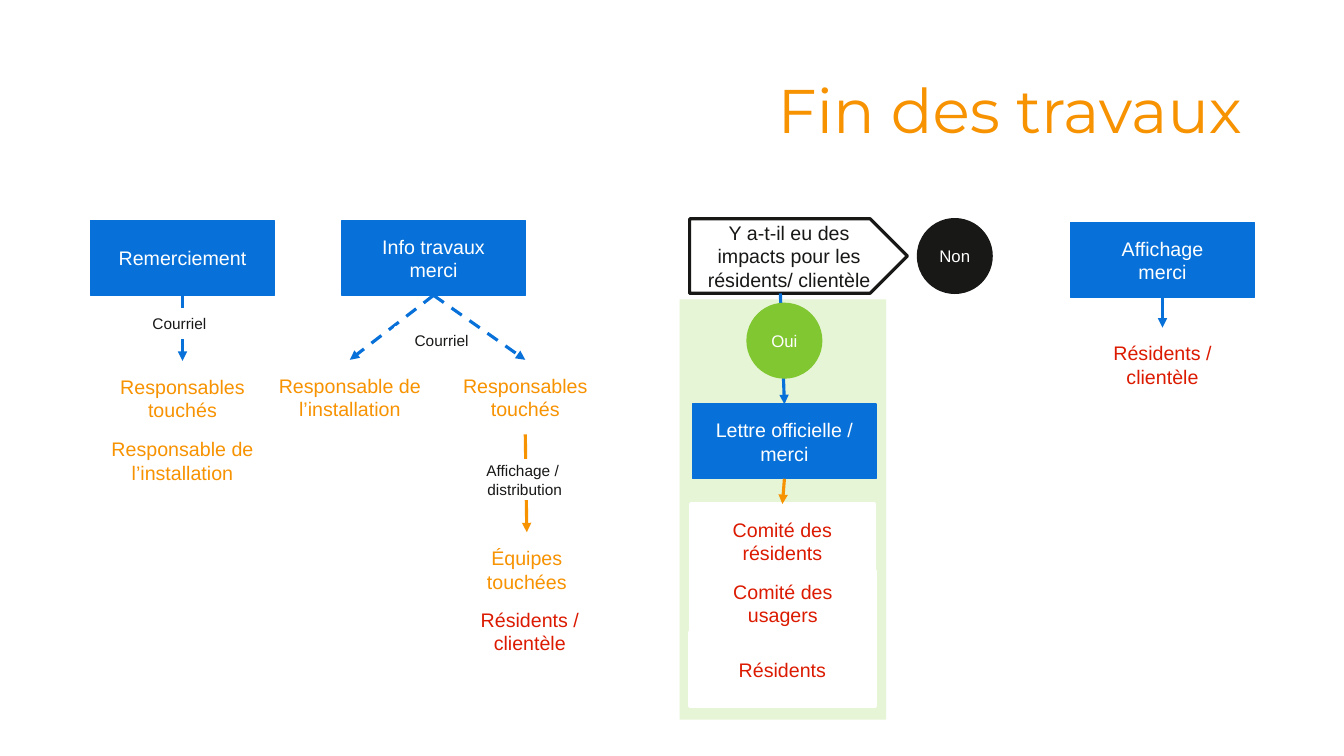
"""Build the flowchart slide that plans messages at the end of works."""
from lxml.etree import SubElement
from pptx import Presentation
from pptx.dml.color import RGBColor
from pptx.enum.dml import MSO_LINE
from pptx.enum.shapes import MSO_CONNECTOR, MSO_SHAPE
from pptx.enum.text import MSO_ANCHOR, PP_ALIGN
from pptx.oxml.ns import qn
from pptx.util import Inches, Pt

COLORS = {"blue": "0871D9", "orange": "F79200", "red": "DB1A00", "black": "181817",
          "green": "81C731", "pale": "E6F5D5", "white": "FFFFFF"}
RECT, ARROW, OVAL = MSO_SHAPE.RECTANGLE, MSO_SHAPE.PENTAGON, MSO_SHAPE.OVAL
W, H = 1.82, 0.74
TOP, BOTTOM = 0, 2

TITLE = ("Fin des travaux", (1.94, 0.4, 10.48, 1.45))
PANEL = (6.74, 2.97, 2.05, 4.17)

# style: geometry, fill, line, line width, text colour, size
STYLES = {
    "action": (RECT, "blue", "blue", 1, "white", 14),
    "staff": (RECT, "white", "white", 2.25, "orange", 14),
    "public": (RECT, "white", "white", 2.25, "red", 14),
    "label": (RECT, "white", "white", 2.25, "black", 11),
    "question": (ARROW, "white", "black", 2.25, "black", 14),
    "no": (OVAL, "black", "black", 1, "white", 12),
    "yes": (OVAL, "green", "green", 1, "white", 12),
}
NODES = {
    "info_touched": ("staff", "Responsables touchés", (4.3, 3.57, W, H)),
    "teams": ("staff", "Équipes touchées", (4.52, 5.28, 1.41, H)),
    "info_residents": ("public", "Résidents / clientèle", (4.55, 5.89, 1.41, H)),
    "info_site": ("staff", "Responsable de l’installation", (2.56, 3.57, W, H)),
    "info": ("action", "Info travaux\nmerci", (3.39, 2.19, W, H)),
    "thanks": ("action", "Remerciement", (0.9, 2.19, W, H)),
    "thanks_touched": ("staff", "Responsables touchés", (0.9, 3.58, W, H)),
    "thanks_site": ("staff", "Responsable de l’installation", (0.9, 4.2, W, H)),
    "question": ("question", "Y a-t-il eu des impacts pour les résidents/ clientèle",
                 (6.84, 2.17, 2.16, H)),
    "no": ("no", "Non", (9.1, 2.17, H, H)),
    "committee": ("public", "Comité des résidents", (6.85, 5, W, H)),
    "residents": ("public", "Résidents", (6.84, 6.27, 1.84, H)),
    "users": ("public", "Comité des usagers", (6.85, 5.66, 1.83, 0.65)),
    "poster_residents": ("public", "Résidents / clientèle", (10.62, 3.25, W, H)),
    "poster": ("action", "Affichage\nmerci", (10.62, 2.21, W, H)),
    "letter": ("action", "Lettre officielle / merci", (6.87, 4.01, W, H)),
}
LABELS = [
    ("label", "Affichage / \ndistribution", (4.52, 4.57, 1.37, 0.38)),
    ("label", "Courriel", (3.92, 3.25, 0.92, 0.26)),
    ("label", "Courriel", (1.32, 3.1, 0.92, 0.22)),
    ("yes", "Oui", (7.41, 3.01, H, H)),
]
QUESTION_EXIT = (7.74, 2.91)
ARROWS_BEHIND = [
    ("letter", "committee", "orange", False),
    ("info_touched", "teams", "orange", False),
    ("info", "info_site", "blue", True),
    ("thanks", "thanks_touched", "blue", True),
    (QUESTION_EXIT, "letter", "blue", False),
    ("poster", "poster_residents", "blue", False),
]
ARROWS_FRONT = [("info", "info_touched", "blue", True)]


def rgb(name):
    return RGBColor.from_string(COLORS[name])


def write(sp, text, font, size, color, align):
    tf = sp.text_frame
    tf.word_wrap = True
    tf.vertical_anchor = MSO_ANCHOR.MIDDLE
    p = tf.paragraphs[0]
    p.text = text
    p.alignment = align
    p.font.name, p.font.size = font, Pt(size)
    p.font.color.rgb = rgb(color)
    return p


def add_box(s, geometry, fill, box):
    sp = s.shapes.add_shape(geometry, *map(Inches, box))
    sp.shadow.inherit = False
    sp.fill.solid()
    sp.fill.fore_color.rgb = rgb(fill)
    return sp


def add_node(s, style, text, box):
    geometry, fill, line, width, color, size = STYLES[style]
    sp = add_box(s, geometry, fill, box)
    sp.line.color.rgb = rgb(line)
    sp.line.width = Pt(width)
    write(sp, text, "Arial", size, color, PP_ALIGN.CENTER)
    return sp


def add_arrow(s, nodes, start, end, color, dashed):
    x, y = (0, 0) if start in nodes else start
    cx = s.shapes.add_connector(MSO_CONNECTOR.STRAIGHT, Inches(x), Inches(y), 0, 0)
    if start in nodes:
        cx.begin_connect(nodes[start], BOTTOM)
    cx.end_connect(nodes[end], TOP)
    cx.line.color.rgb = rgb(color)
    cx.line.width = Pt(2.25)
    if dashed:
        cx.line.dash_style = MSO_LINE.DASH
    SubElement(cx.line._get_or_add_ln(), qn("a:tailEnd"), type="triangle")
    SubElement(cx._element.spPr, qn("a:effectLst"))


def main():
    prs = Presentation()
    prs.slide_width, prs.slide_height = Inches(13.33), Inches(7.5)
    s = prs.slides.add_slide(prs.slide_layouts[6])
    add_box(s, RECT, "pale", PANEL).line.fill.background()
    text, box = TITLE
    title = s.shapes.add_textbox(*map(Inches, box))
    write(title, text, "Montserrat", 44, "orange", PP_ALIGN.RIGHT).line_spacing = 0.9
    nodes = {name: add_node(s, *node) for name, node in NODES.items()}
    for arrow in ARROWS_BEHIND:
        add_arrow(s, nodes, *arrow)
    for label in LABELS:
        add_node(s, *label)
    for arrow in ARROWS_FRONT:
        add_arrow(s, nodes, *arrow)
    prs.save("out.pptx")


if __name__ == "__main__":
    main()
